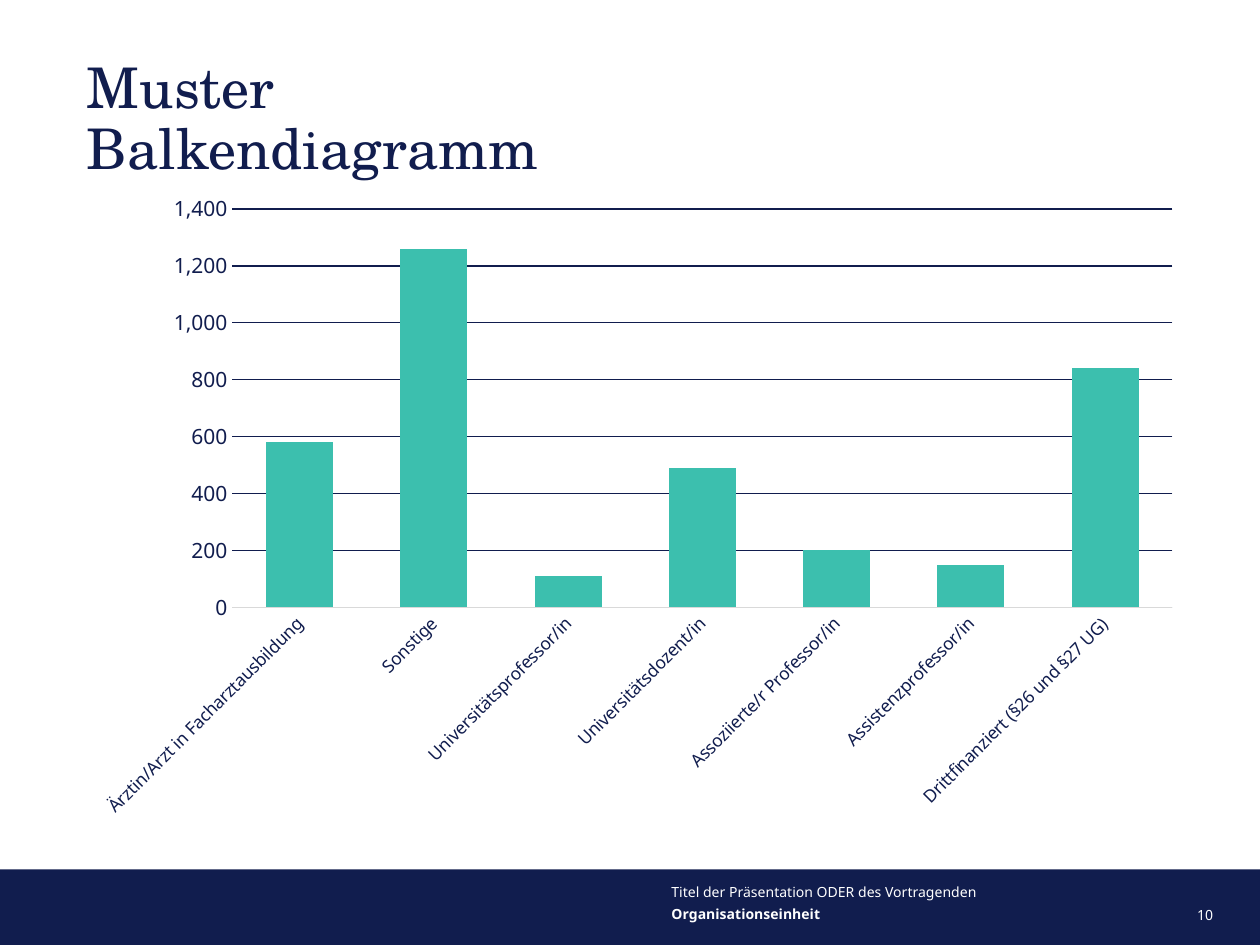
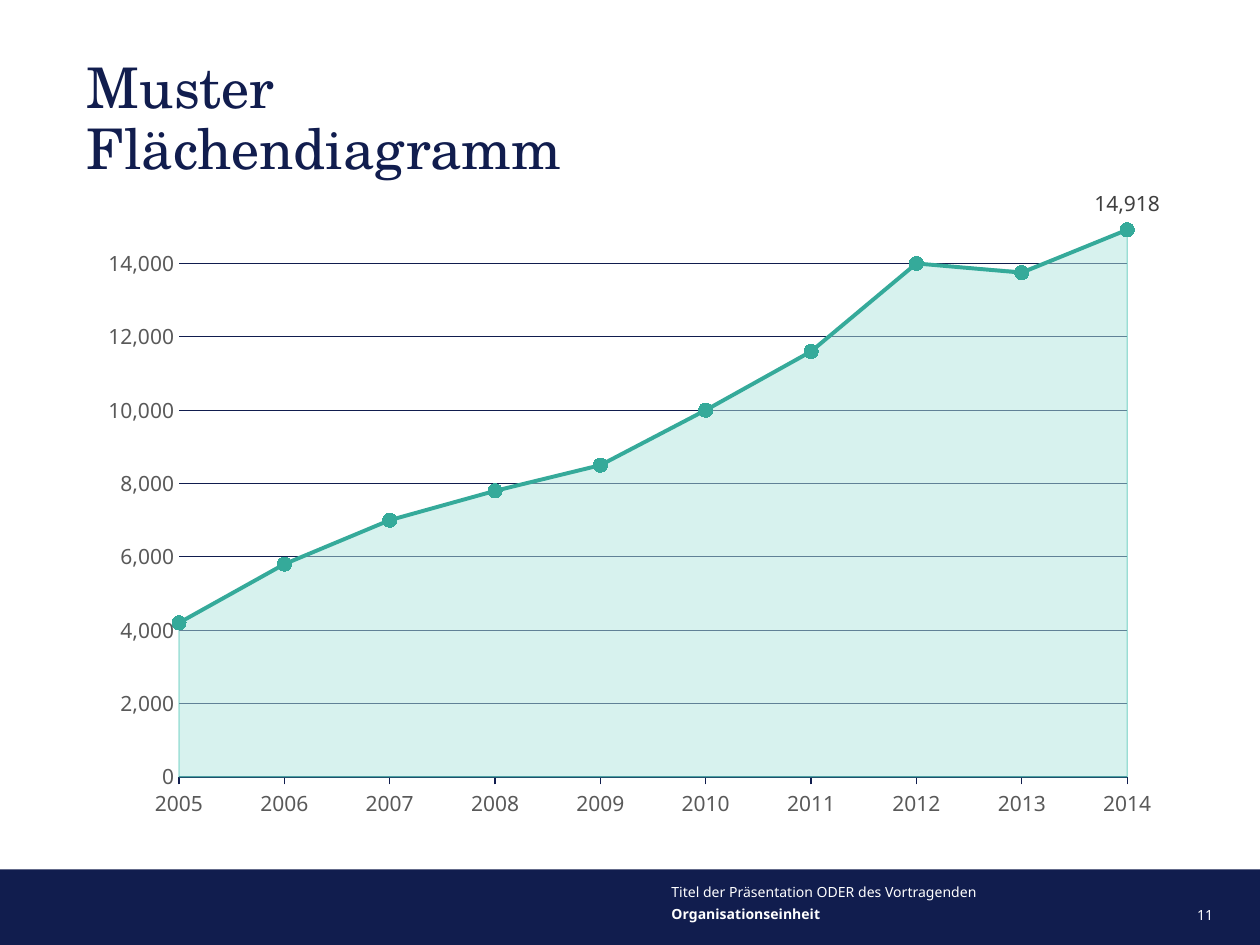
from lxml import etree
from pptx import Presentation
from pptx import util as u
from pptx.chart.data import CategoryChartData
from pptx.dml.color import RGBColor
from pptx.enum import chart as ch, shapes, text
from pptx.oxml import parse_xml
from pptx.oxml.ns import nsdecls, qn

NAVY = RGBColor(0x11, 0x1D, 0x4E)
WHITE = RGBColor(0xFF, 0xFF, 0xFF)
TEAL = RGBColor(0x3C, 0xBF, 0xAE)
DARK_TEAL = RGBColor(0x35, 0xAA, 0x9A)
PALE_TEAL = RGBColor(0xB0, 0xE6, 0xDF)
GREY = RGBColor(0x59, 0x59, 0x59)
DARK_GREY = RGBColor(0x40, 0x40, 0x40)
LIGHT_GREY = RGBColor(0xD9, 0xD9, 0xD9)
SERIF, SANS = "TeX Gyre Schola", "Noto Sans"
CHART_BOX = (47.5, 105.8, 622.8, 391)
THOUSANDS = "#,##0"


class Deck:
    """Holds the shared style and the current slide."""

    def __init__(self):
        self.prs = Presentation()
        self.prs.slide_width, self.prs.slide_height = u.Pt(720), u.Pt(540)
        self.s = None

    def style(self, font, size, color, name=SANS, bold=False):
        font.name, font.size, font.bold = name, u.Pt(size), bold
        font.color.rgb = color

    def line(self, line, color, width):
        line.color.rgb = color
        line.width = u.Pt(width)

    def fade(self, fill_parent, percent):
        for clr in fill_parent.iter(qn("a:srgbClr")):
            etree.SubElement(clr, qn("a:alpha"), val=str(percent * 1000))

    def slide(self, title, number):
        self.s = self.prs.slides.add_slide(self.prs.slide_layouts[6])
        self.band(0, 496.8, 720, 43.2)
        self.title(title)
        self.text((376.6, 514.1, 286.6, 18.7), ["Organisationseinheit"], bold=True)
        self.text((376.6, 501.1, 286.6, 18), ["Titel der Präsentation ODER des Vortragenden"])
        tf = self.text((670.3, 506.9, 36.7, 24.5), [str(number)])
        tf.vertical_anchor = text.MSO_ANCHOR.BOTTOM
        tf.paragraphs[0].alignment = text.PP_ALIGN.CENTER

    def band(self, *box):
        sp = self.s.shapes.add_shape(shapes.MSO_SHAPE.RECTANGLE, *map(u.Pt, box))
        sp.shadow.inherit = False
        sp.fill.solid()
        sp.fill.fore_color.rgb = NAVY
        sp.line.fill.background()

    def text(self, box, lines, size=8, color=WHITE, name=SANS, bold=False):
        tf = self.s.shapes.add_textbox(*map(u.Pt, box)).text_frame
        tf.word_wrap = True
        p = tf.paragraphs[0]
        for i, line in enumerate(lines):
            if i:
                p.add_line_break()
            r = p.add_run()
            r.text = line
            self.style(r.font, size, color, name, bold)
        return tf

    def title(self, lines):
        tf = self.text((49.7, 28.8, 620.6, 76.3), lines, 32, NAVY, SERIF)
        tf.margin_left = tf.margin_right = tf.margin_bottom = 0
        tf.margin_top = u.Pt(5.8)
        tf.paragraphs[0].line_spacing = 0.9

    def chart(self, kind, cats, series, layout):
        data = CategoryChartData(number_format=THOUSANDS)
        data.categories = cats
        for i, vals in enumerate(series, 1):
            data.add_series(f"Series {i}", vals)
        chart = self.s.shapes.add_chart(kind, *map(u.Pt, CHART_BOX), data).chart
        chart.has_legend = chart.has_title = False
        self.style(chart.font, 10, RGBColor(0, 0, 0))
        chart.plots[0].vary_by_categories = False
        self.plot_layout(chart, layout)
        return chart

    def plot_layout(self, chart, layout):
        area = chart._chartSpace.chart.plotArea
        for old in area.findall(qn("c:layout")):
            area.remove(old)
        sizes = "".join(f'<c:{k} val="{v}"/>' for k, v in zip("xywh", layout))
        area.insert(0, parse_xml(
            f'<c:layout {nsdecls("c")}><c:manualLayout><c:layoutTarget val="inner"/>'
            f'<c:xMode val="edge"/><c:yMode val="edge"/>{sizes}'
            '</c:manualLayout></c:layout>'))

    def axes(self, chart, color, cat_size, cat_line, cat_tick, top, unit):
        cat, val = chart.category_axis, chart.value_axis
        for axis, size, tick in ((cat, cat_size, cat_tick), (val, 12, ch.XL_TICK_MARK.NONE)):
            axis.major_tick_mark = tick
            axis.minor_tick_mark = ch.XL_TICK_MARK.NONE
            self.style(axis.tick_labels.font, size, color)
        cat.has_major_gridlines = False
        self.line(cat.format.line, cat_line, 0.75)
        val.minimum_scale, val.maximum_scale, val.major_unit = 0, top, unit
        val.has_major_gridlines = True
        self.line(val.major_gridlines.format.line, NAVY, 0.75)
        val.format.line.fill.background()
        val.tick_labels.number_format = THOUSANDS
        val.tick_labels.number_format_is_linked = False

    def column_chart(self, cats, vals):
        chart = self.chart(ch.XL_CHART_TYPE.COLUMN_CLUSTERED, cats, [vals],
                           (0.137, 0.035, 0.863, 0.582))
        self.axes(chart, NAVY, 10, LIGHT_GREY, ch.XL_TICK_MARK.NONE, 1400, 200)
        body = chart.category_axis._element.find(qn("c:txPr")).find(qn("a:bodyPr"))
        body.set("rot", "-2700000")
        body.set("vert", "horz")
        plot = chart.plots[0]
        plot.gap_width, plot.overlap = 100, -50
        fill = plot.series[0].format.fill
        fill.solid()
        fill.fore_color.rgb = TEAL

    def area_chart(self, cats, area_vals, line_vals):
        chart = self.chart(ch.XL_CHART_TYPE.LINE_MARKERS, cats, [area_vals, line_vals],
                           (0.088, 0.061, 0.87, 0.804))
        self.axes(chart, GREY, 12, NAVY, ch.XL_TICK_MARK.OUTSIDE, 15000, 2000)
        self.first_series_to_area(chart)
        area, line = (plot.series[0] for plot in chart.plots)

        area.format.fill.solid()
        area.format.fill.fore_color.rgb = PALE_TEAL
        self.line(area.format.line, TEAL, 0.75)
        self.fade(area._element, 50)

        line.smooth = False
        self.line(line.format.line, DARK_TEAL, 2.25)
        marker = line.marker
        marker.style, marker.size = ch.XL_MARKER_STYLE.CIRCLE, 8
        marker.format.fill.solid()
        marker.format.fill.fore_color.rgb = DARK_TEAL
        self.line(marker.format.line, DARK_TEAL, 0.75)

        label = line.points[len(line_vals) - 1].data_label
        label.position = ch.XL_LABEL_POSITION.ABOVE
        self.style(label.font, 12, DARK_GREY)
        line.data_labels.show_value = False

    def first_series_to_area(self, chart):
        lines = chart.plots[0]._element
        ser = lines.find(qn("c:ser"))
        for tag in ("c:marker", "c:smooth"):
            for el in ser.findall(qn(tag)):
                ser.remove(el)
        ids = "".join(f'<c:axId val="{el.get("val")}"/>' for el in lines.findall(qn("c:axId")))
        area = parse_xml(f'<c:areaChart {nsdecls("c")}><c:grouping val="standard"/>'
                         f'<c:varyColors val="0"/>{ids}</c:areaChart>')
        area.insert(2, ser)
        lines.addprevious(area)
        for el in chart.value_axis._element.findall(qn("c:crossBetween")):
            el.set("val", "between")


def main():
    deck = Deck()
    deck.slide(["Muster ", "Balkendiagramm"], 10)
    deck.column_chart(
        ["Ärztin/Arzt in Facharztausbildung", "Sonstige", "Universitätsprofessor/in",
         "Universitätsdozent/in", "Assoziierte/r Professor/in", "Assistenzprofessor/in",
         "Drittfinanziert (§26 und §27 UG)"],
        [580, 1260, 110, 490, 200, 150, 840])

    deck.slide(["Muster ", "Flächendiagramm"], 11)
    shared = [4200, 5800, 7000, 7800, 8500, 10000, 11600, 14000]
    deck.area_chart([str(year) for year in range(2005, 2015)],
                    shared + [13800, 14900], shared + [13750, 14918])
    deck.prs.save("out.pptx")


if __name__ == "__main__":
    main()
